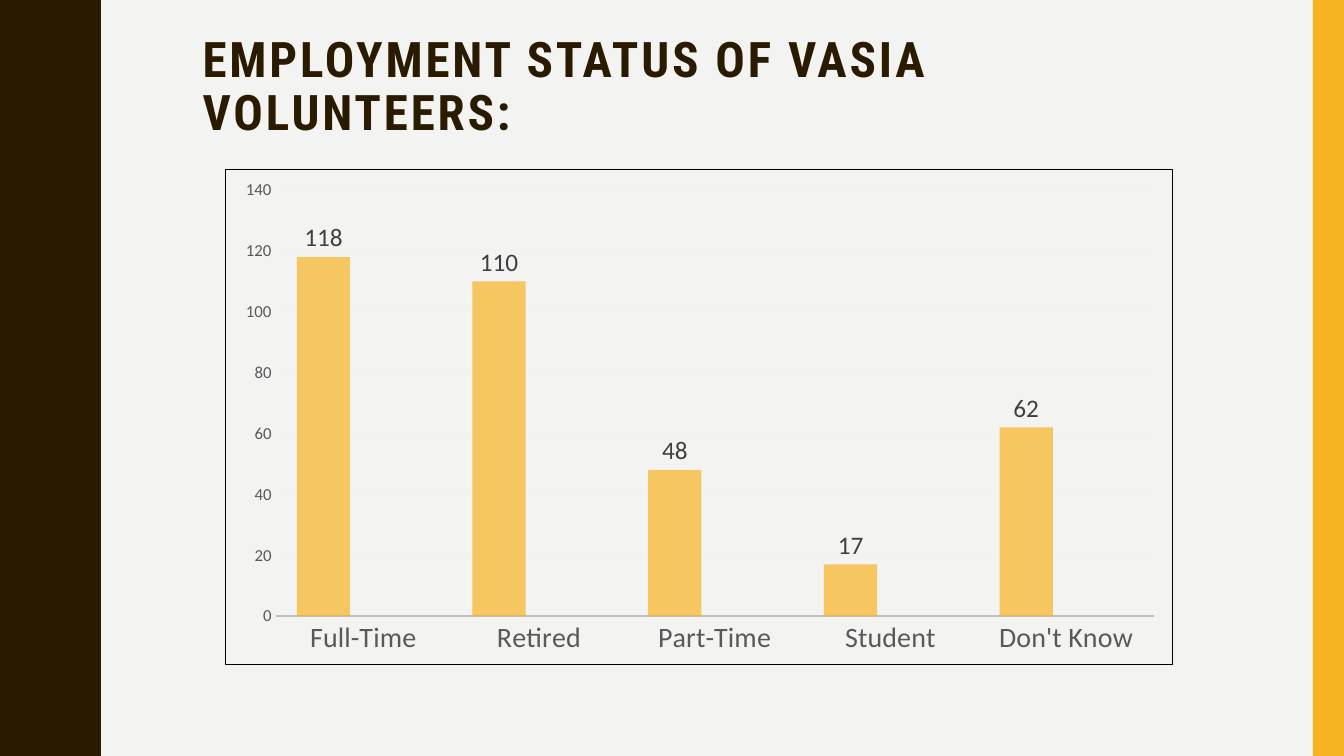
from dataclasses import dataclass

from lxml import etree
from pptx import Presentation
from pptx import util as u
from pptx.chart import data as chart_data
from pptx.dml.color import RGBColor
from pptx.enum import chart as chart_enums
from pptx.enum import shapes, text
from pptx.oxml import parse_xml
from pptx.oxml.ns import nsdecls, qn

BROWN = "2A1A00"
AMBER = "F8B323"
GREY = "595959"
BODY_FONT = "Calibri"
CATEGORIES = ["Full-Time", "Retired", "Part-Time", "Student", "Don't Know"]
WAVE_PERIOD = 1.5
WAVE_COUNT = 5
RISING_EDGE = [
    (0.78, 0), (0.78, 0.07), (0.79, 0.14), (0.8, 0.2), (0.81, 0.25),
    (0.83, 0.29), (0.85, 0.33), (0.87, 0.38), (0.89, 0.42), (0.91, 0.46),
    (0.93, 0.5), (0.95, 0.55), (0.96, 0.61), (0.97, 0.68), (0.97, 0.75),
]


@dataclass
class Series:
    name: str
    values: list
    color: str


SERIES = [
    Series("Series 1", [118, 110, 48, 17, 62], AMBER),
    Series("Series 2", [None] * len(CATEGORIES), "656A59"),
    Series("Series 3", [None] * len(CATEGORIES), "46B2B5"),
]


def rgb(color: str) -> RGBColor:
    return RGBColor.from_string(color)


def paint(fill, color: str) -> None:
    fill.solid()
    fill.fore_color.rgb = rgb(color)


def style_font(font, name: str, size: float, color: str) -> None:
    font.name = name
    font.size = u.Pt(size)
    font.color.rgb = rgb(color)


def style_line(line, color: str, width: float) -> None:
    line.color.rgb = rgb(color)
    line.width = u.Pt(width)


def finish_shape(shape, color: str) -> None:
    paint(shape.fill, color)
    shape.line.fill.background()
    shape.shadow.inherit = False


def add_side_bands(page) -> None:
    falling_edge = [(x, WAVE_PERIOD - y) for x, y in reversed(RISING_EDGE[:-1])]
    wave = RISING_EDGE + falling_edge
    edge = [(x, y + WAVE_PERIOD * index)
            for index in range(WAVE_COUNT) for x, y in wave]
    builder = page.shapes.build_freeform(0, 0, scale=u.Inches(1))
    builder.add_line_segments(edge + [(0, WAVE_PERIOD * WAVE_COUNT)], close=True)
    finish_shape(builder.convert_to_shape(), BROWN)
    band = page.shapes.add_shape(
        shapes.MSO_SHAPE.RECTANGLE,
        u.Inches(13.02), 0, u.Inches(0.31), u.Inches(7.5))
    finish_shape(band, AMBER)


def add_title(page, words: str) -> None:
    box = page.shapes.title
    box.left, box.top = u.Inches(1.91), u.Inches(0.3)
    box.width, box.height = u.Inches(10.05), u.Inches(0.83)
    frame = box.text_frame
    frame.word_wrap = True
    frame.auto_size = text.MSO_AUTO_SIZE.NONE
    frame.vertical_anchor = text.MSO_ANCHOR.TOP
    para = frame.paragraphs[0]
    para.alignment = text.PP_ALIGN.LEFT
    para.line_spacing = 0.9
    span = para.add_run()
    span.text = words
    style_font(span.font, "Roboto Condensed", 35, BROWN)
    span.font.bold = True
    span.font._element.set("spc", "200")


def style_axes(chart) -> None:
    category_axis, value_axis = chart.category_axis, chart.value_axis
    for axis, size in ((category_axis, 20), (value_axis, 12)):
        axis.major_tick_mark = chart_enums.XL_TICK_MARK.NONE
        axis.minor_tick_mark = chart_enums.XL_TICK_MARK.NONE
        style_font(axis.tick_labels.font, BODY_FONT, size, GREY)
    style_line(category_axis.format.line, "BFBFBF", 1.25)
    value_axis.format.line.fill.background()
    value_axis.minimum_scale = 0
    value_axis.maximum_scale = 140
    value_axis.major_unit = 20
    value_axis.has_major_gridlines = True
    style_line(value_axis.major_gridlines.format.line, "F2F2F2", 0.75)


def style_columns(plot) -> None:
    plot.gap_width = 80
    plot.overlap = 25
    plot.vary_by_categories = False
    for item, column in zip(SERIES, plot.series):
        paint(column.format.fill, item.color)
        column.invert_if_negative = False
        color = column.format.element.find(".//" + qn("a:srgbClr"))
        etree.SubElement(color, qn("a:alpha"), val="70000")
    labels = plot.series[0].data_labels
    labels.show_value = True
    labels.position = chart_enums.XL_LABEL_POSITION.OUTSIDE_END
    style_font(labels.font, BODY_FONT, 18, "404040")


def frame_chart(chart) -> None:
    border = parse_xml(
        f'<c:spPr {nsdecls("c", "a")}><a:noFill/><a:ln w="9525"><a:solidFill>'
        '<a:srgbClr val="000000"/></a:solidFill></a:ln></c:spPr>')
    chart.element.find(qn("c:chart")).addnext(border)
    plot_area = chart.element.find(".//" + qn("c:plotArea"))
    for old in plot_area.findall(qn("c:layout")):
        plot_area.remove(old)
    layout = etree.Element(qn("c:layout"))
    manual = etree.SubElement(layout, qn("c:manualLayout"))
    settings = {"layoutTarget": "inner", "xMode": "edge", "yMode": "edge",
                "x": "0.053", "y": "0.041", "w": "0.928", "h": "0.861"}
    for name, value in settings.items():
        etree.SubElement(manual, qn("c:" + name), val=value)
    plot_area.insert(0, layout)


def add_status_chart(page) -> None:
    status = chart_data.CategoryChartData()
    status.categories = CATEGORIES
    for item in SERIES:
        status.add_series(item.name, item.values)
    chart = page.shapes.add_chart(
        chart_enums.XL_CHART_TYPE.COLUMN_CLUSTERED,
        u.Inches(2.23), u.Inches(1.68), u.Inches(9.4), u.Inches(4.92),
        status).chart
    chart.has_legend = False
    chart.has_title = False
    style_font(chart.font, BODY_FONT, 10, "000000")
    style_axes(chart)
    style_columns(chart.plots[0])
    frame_chart(chart)


def main() -> None:
    deck = Presentation()
    deck.slide_width, deck.slide_height = u.Inches(13.33), u.Inches(7.5)
    page = deck.slides.add_slide(deck.slide_layouts.get_by_name("Title Only"))
    paint(page.background.fill, "F3F3F2")
    add_side_bands(page)
    add_title(page, "EMPLOYMENT STATUS OF VASIA VOLUNTEERS:")
    add_status_chart(page)
    deck.save("out.pptx")


if __name__ == "__main__":
    main()
